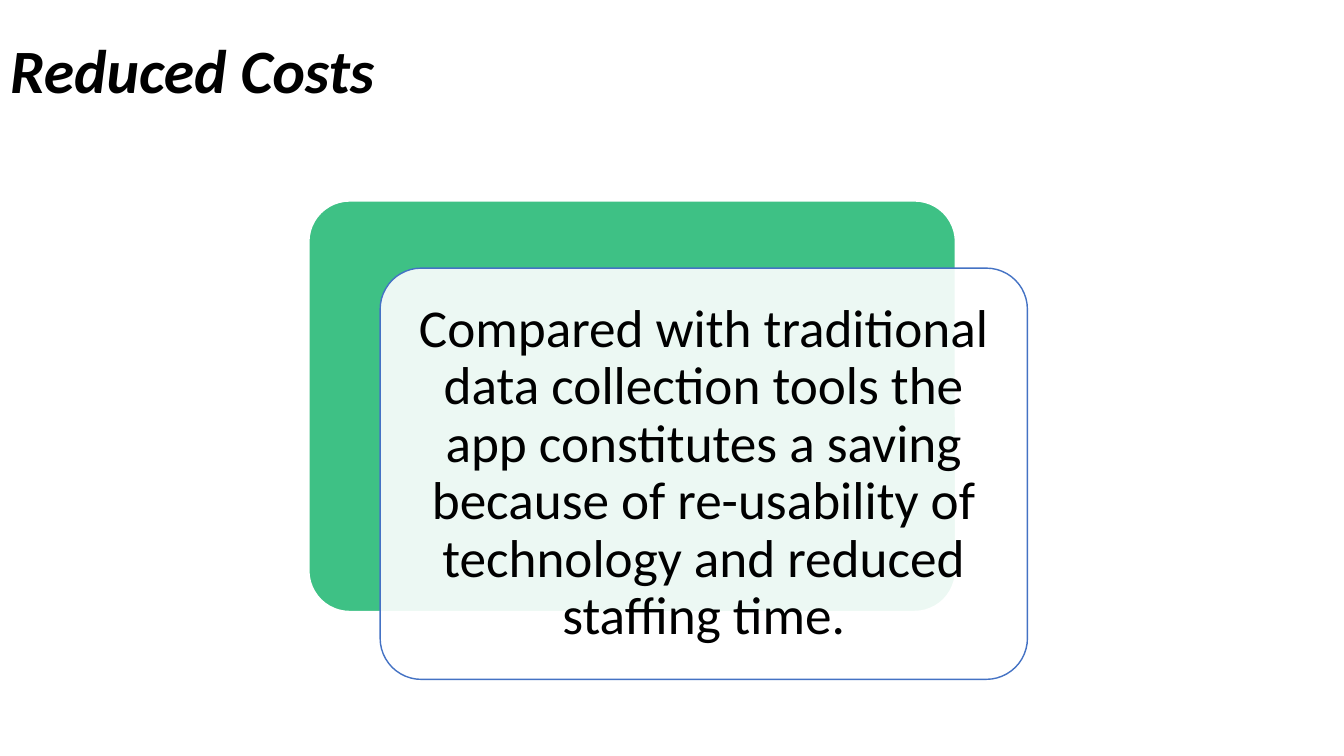
"""Build the "Reduced Costs" slide: a title and two overlapping cards."""
from lxml import etree
from pptx import Presentation
from pptx.dml.color import RGBColor
from pptx.enum.shapes import MSO_SHAPE
from pptx.enum.text import MSO_ANCHOR, PP_ALIGN
from pptx.oxml.ns import qn
from pptx.util import Inches, Pt

ROUNDED = MSO_SHAPE.ROUNDED_RECTANGLE
MIDDLE = MSO_ANCHOR.MIDDLE
LEFT, CENTER = PP_ALIGN.LEFT, PP_ALIGN.CENTER
COLORS = {"green": "3EC185", "white": "FFFFFF", "blue": "4472C4", "black": "000000"}
TITLE_ONLY = 5
CARD_LEFT, CARD_TOP = 3.06, 1.99
CARD_WIDTH, CARD_HEIGHT = 6.42, 4.08
STEP_X, STEP_Y = 0.71, 0.67
CARD_INSET = 0.16


def color(name):
    """Return the named colour."""
    return RGBColor.from_string(COLORS[name])


def write(box, text, size, align, bold=False, italic=False, space_after=0):
    """Fill a shape with one formatted paragraph."""
    frame = box.text_frame
    frame.word_wrap = True
    frame.vertical_anchor = MIDDLE
    para = frame.paragraphs[0]
    para.alignment = align
    para.line_spacing = 0.9
    para.space_after = Pt(space_after)
    span = para.add_run()
    span.text = text
    span.font.name = "Calibri"
    span.font.size = Pt(size)
    span.font.bold = bold
    span.font.italic = italic
    span.font.color.rgb = color("black")


deck = Presentation()
deck.slide_width, deck.slide_height = Inches(13.33), Inches(7.5)
page = deck.slides.add_slide(deck.slide_layouts[TITLE_ONLY])

title = page.shapes.title
title.left, title.top = Inches(0), Inches(0)
title.width, title.height = Inches(11.5), Inches(1.45)
write(title, "Reduced Costs", size=44, align=LEFT, bold=True, italic=True)

cards = []
for index, (fill, line, line_width) in enumerate([("green", "white", 1.5), ("white", "blue", 1)]):
    card = page.shapes.add_shape(
        ROUNDED,
        Inches(CARD_LEFT + index * STEP_X),
        Inches(CARD_TOP + index * STEP_Y),
        Inches(CARD_WIDTH),
        Inches(CARD_HEIGHT),
    )
    card.adjustments[0] = 0.1
    card.shadow.inherit = False
    card.fill.solid()
    card.fill.fore_color.rgb = color(fill)
    card.line.color.rgb = color(line)
    card.line.width = Pt(line_width)
    cards.append(card)

front_card = cards[-1]
front_fill = front_card._element.spPr.find(qn("a:solidFill")).find(qn("a:srgbClr"))
etree.SubElement(front_fill, qn("a:alpha")).set("val", "90000")

frame = front_card.text_frame
frame.margin_left = frame.margin_right = Inches(CARD_INSET)
frame.margin_top = frame.margin_bottom = Inches(CARD_INSET)
write(
    front_card,
    "Compared with traditional data collection tools the app "
    "constitutes a saving because of re-usability of technology "
    "and reduced staffing time.",
    size=38,
    align=CENTER,
    space_after=13,
)

deck.save("out.pptx")
